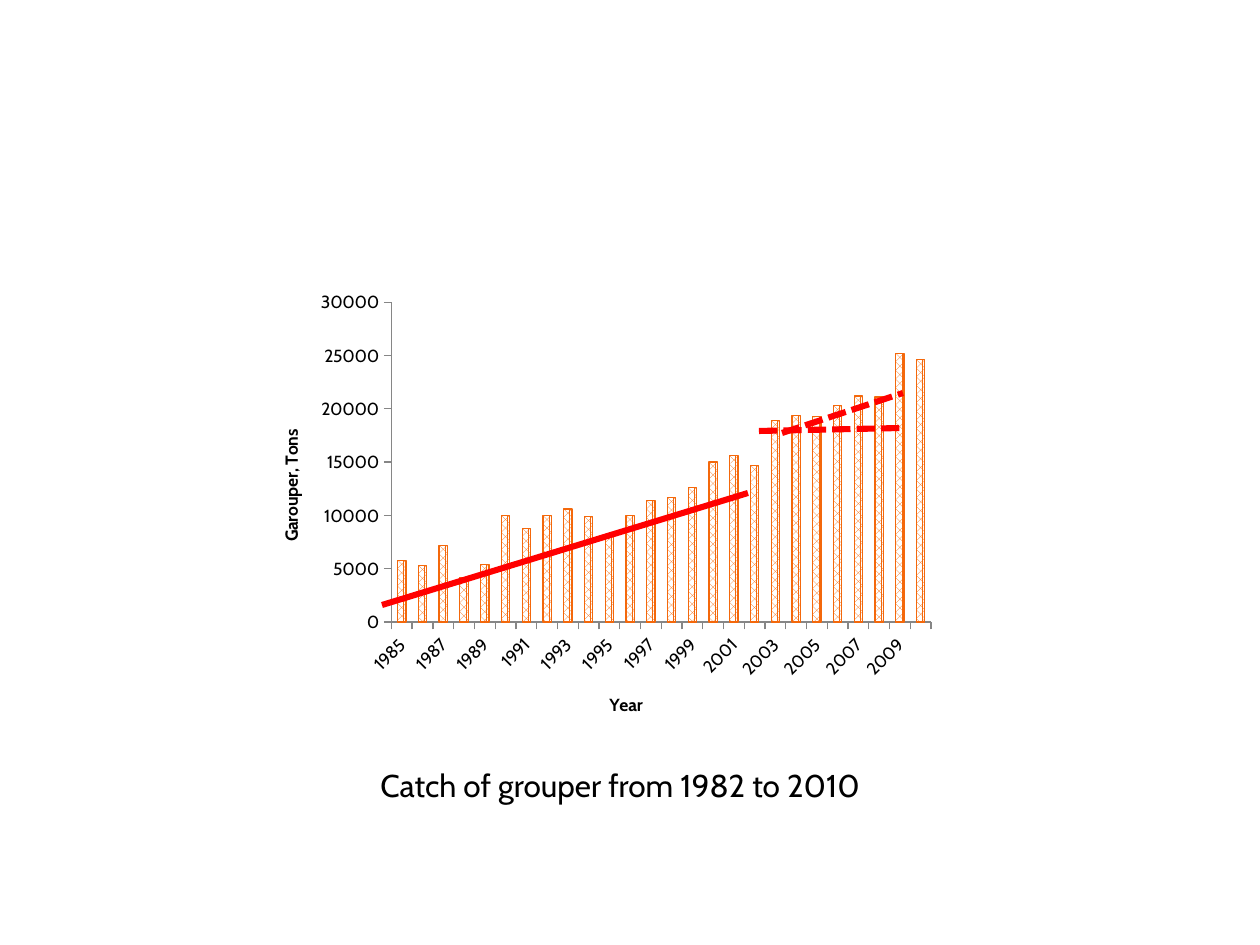
from lxml.etree import SubElement
from pptx import Presentation
from pptx.chart.data import CategoryChartData
from pptx.dml.color import RGBColor
from pptx.enum.chart import XL_CHART_TYPE, XL_TICK_MARK
from pptx.enum.dml import MSO_LINE, MSO_PATTERN
from pptx.enum.shapes import MSO_CONNECTOR
from pptx.enum.text import MSO_AUTO_SIZE
from pptx.oxml import parse_xml
from pptx.oxml.ns import nsdecls, qn
from pptx.util import Pt

PX = 914400 / 126
FONT = "Cabin"
COLORS = {"text": "000000", "bar": "F4680B", "paper": "FFFFFF", "trend": "FF0000", "axis": "868686"}
FIRST_YEAR = 1985
CATCHES = [
    5800, 5300, 7200, 4200, 5400, 10000, 8800, 10000, 10600, 9900, 8200, 10000, 11400,
    11700, 12600, 15000, 15600, 14700, 18900, 19400, 19300, 20300, 21200, 21100, 25200, 24600,
]
TRENDS = [
    ((129, 321), (495, 209), None),
    ((529, 149), (650, 109), MSO_LINE.SQUARE_DOT),
    ((506, 147), (650, 144), MSO_LINE.SQUARE_DOT),
]


def emu(px):
    return round(px * PX)


def color(name):
    return RGBColor.from_string(COLORS[name])


def set_font(font, size, bold=False):
    font.name = FONT
    font.size = Pt(size)
    font.bold = bold
    font.color.rgb = color("text")


def style_axis(axis, title):
    axis.has_major_gridlines = False
    axis.major_tick_mark = XL_TICK_MARK.OUTSIDE
    axis.minor_tick_mark = XL_TICK_MARK.NONE
    axis.format.line.color.rgb = color("axis")
    axis.format.line.width = Pt(0.75)
    set_font(axis.tick_labels.font, 10)
    axis.has_title = True
    paragraph = axis.axis_title.text_frame.paragraphs[0]
    paragraph.text = title
    set_font(paragraph.font, 10, True)


def place_plot(chart, left, top, width, height):
    plot_area = chart.plots[0]._element.getparent()
    for layout in plot_area.findall(qn("c:layout")):
        plot_area.remove(layout)
    layout = parse_xml(f"<c:layout {nsdecls('c')}/>")
    manual = SubElement(layout, qn("c:manualLayout"))
    settings = {
        "layoutTarget": "inner", "xMode": "edge", "yMode": "edge",
        "x": left, "y": top, "w": width, "h": height,
    }
    for tag, value in settings.items():
        SubElement(manual, qn(f"c:{tag}")).set("val", str(value))
    plot_area.insert(0, layout)


def add_catch_chart(slide, left, top, width, height):
    data = CategoryChartData()
    data.categories = [str(FIRST_YEAR + index) for index in range(len(CATCHES))]
    data.add_series("Series 1", CATCHES)
    chart = slide.shapes.add_chart(
        XL_CHART_TYPE.COLUMN_CLUSTERED, emu(left), emu(top), emu(width), emu(height), data
    ).chart
    chart.has_title = False
    chart.has_legend = False
    set_font(chart.font, 10)
    plot = chart.plots[0]
    plot.gap_width = 150
    plot.vary_by_categories = False
    bars = plot.series[0].format
    bars.fill.patterned()
    bars.fill.pattern = MSO_PATTERN.PERCENT_70
    bars.fill.fore_color.rgb = color("bar")
    bars.fill.back_color.rgb = color("paper")
    bars.line.color.rgb = color("bar")
    bars.line.width = Pt(0.75)
    style_axis(chart.category_axis, "Year")
    style_axis(chart.value_axis, "Garouper, Tons")
    chart.value_axis.minimum_scale = 0
    chart.value_axis.maximum_scale = 30000
    chart.value_axis.major_unit = 5000
    axis_element = chart.category_axis._element
    axis_element.find(qn("c:txPr")).find(qn("a:bodyPr")).set("rot", "-2700000")
    label_skip = parse_xml(f'<c:tickLblSkip {nsdecls("c")} val="2"/>')
    axis_element.find(qn("c:noMultiLvlLbl")).addprevious(label_skip)
    place_plot(chart, 0.2, 0.04, 0.78, 0.7)


def add_trends(slide, left, top):
    for start, end, dash in TRENDS:
        connector = slide.shapes.add_connector(
            MSO_CONNECTOR.STRAIGHT,
            emu(left + start[0]), emu(top + start[1]), emu(left + end[0]), emu(top + end[1]),
        )
        connector.line.color.rgb = color("trend")
        connector.line.width = Pt(3.5)
        if dash:
            connector.line.dash_style = dash
        SubElement(connector._element.spPr, qn("a:effectLst"))


def add_caption(slide, left, top, width, height):
    frame = slide.shapes.add_textbox(emu(left), emu(top), emu(width), emu(height)).text_frame
    frame.word_wrap = False
    frame.auto_size = MSO_AUTO_SIZE.SHAPE_TO_FIT_TEXT
    paragraph = frame.paragraphs[0]
    paragraph.text = "Catch of grouper from 1982 to 2010"
    set_font(paragraph.font, 18)


def main():
    presentation = Presentation()
    presentation.slide_width = emu(1260)
    presentation.slide_height = emu(945)
    slide = presentation.slides.add_slide(presentation.slide_layouts[6])
    add_catch_chart(slide, 253, 284, 692, 457)
    add_trends(slide, 253, 284)
    add_caption(slide, 368, 760, 529, 50)
    presentation.save("out.pptx")


if __name__ == "__main__":
    main()
